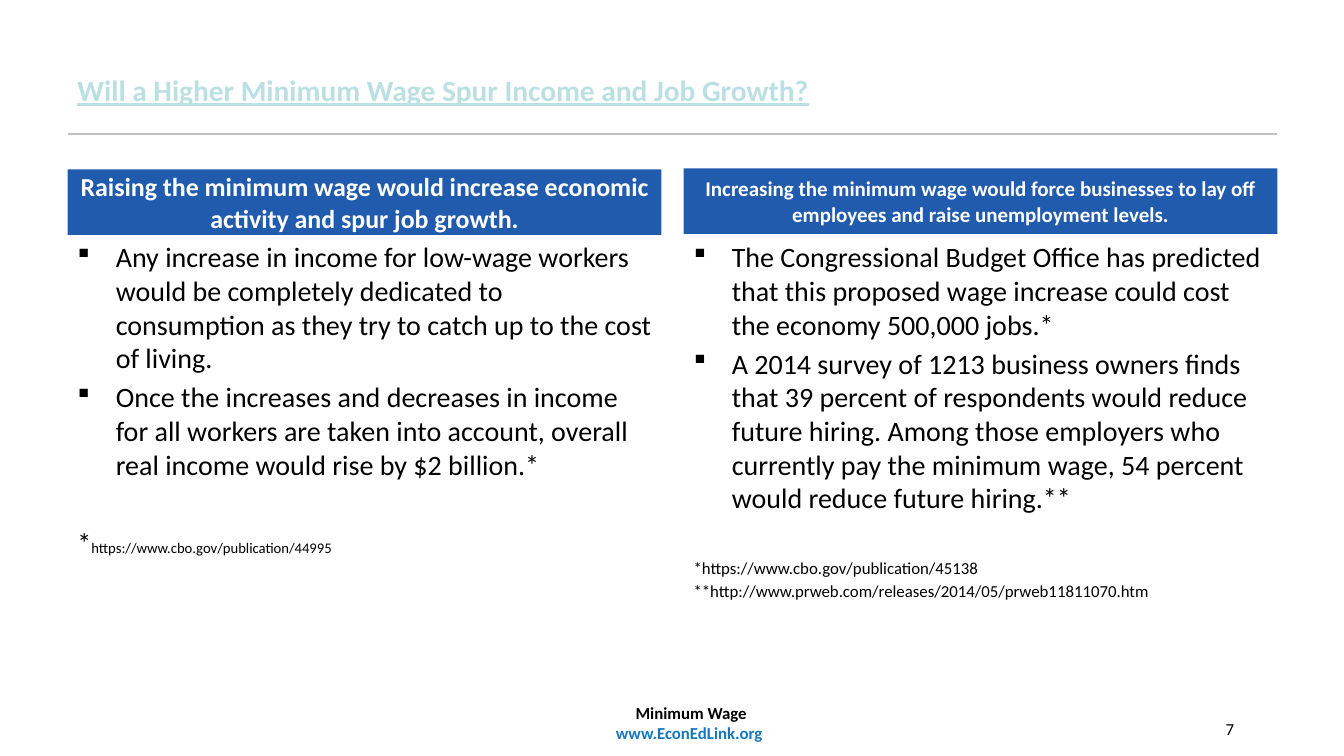
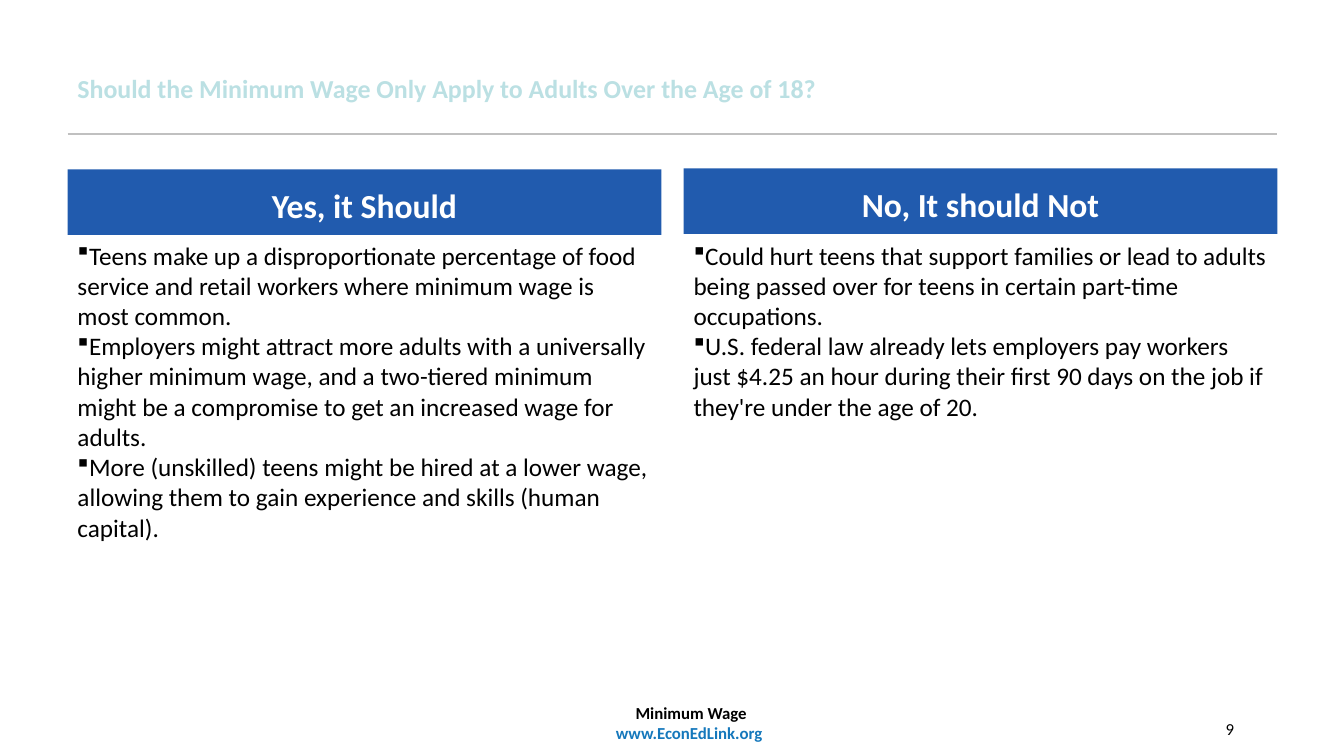
from lxml import etree
from pptx import Presentation, util as u
from pptx.dml.color import RGBColor
from pptx.enum import shapes, text
from pptx.oxml.ns import qn

INK, WHITE, PALE = "000000", "FFFFFF", "BBE0E3"
BLUE, LINK, GRAY = "215BAE", "1578BC", "C0C0C0"
FACE = "Calibri"
LEFT, RIGHT, WIDE, FULL = 0.67, 6.78, 5.89, 12
ALIGN = text.PP_ALIGN


def hue(code):
    return RGBColor.from_string(code)


def style(font, size, color=INK, bold=False, under=False):
    font.name, font.size = FACE, u.Pt(size)
    font.bold, font.underline = bold, under
    font.color.rgb = hue(color)


def frame(slide, box):
    body = slide.shapes.add_textbox(*map(u.Inches, box)).text_frame
    body.word_wrap = True
    return body


def line(body, words, size, first, align=ALIGN.LEFT, before=0, hang=None, **look):
    par = body.paragraphs[0] if first else body.add_paragraph()
    par.alignment = align
    if before and not first:
        par.space_before = u.Pt(before)
    if hang is not None:
        props = par._p.get_or_add_pPr()
        props.set("marL", str(u.Inches(hang)))
        props.set("indent", str(-u.Inches(hang)))
        etree.SubElement(props, qn("a:buFont")).set("typeface", "Wingdings")
        etree.SubElement(props, qn("a:buChar")).set("char", "§")
    par.add_run().text = words
    style(par.font, size, **look)
    return par


def base(deck, title, size, page, under=False):
    slide = deck.slides.add_slide(deck.slide_layouts[6])
    rule = slide.shapes.add_connector(
        shapes.MSO_CONNECTOR.STRAIGHT,
        *map(u.Inches, (LEFT, 1.33, LEFT + FULL, 1.33)))
    rule.line.color.rgb, rule.line.width = hue(GRAY), u.Pt(1.25)
    etree.SubElement(rule._element.spPr, qn("a:effectLst"))
    line(frame(slide, (LEFT, 0.67, FULL, 0.67)), title, size, True,
         color=PALE, bold=True, under=under)
    line(frame(slide, (9.56, 7.08, 2.78, 0.5)), page, 12, True, ALIGN.RIGHT)
    foot = frame(slide, (1.1, 6.92, 11.51, 0.5))
    line(foot, "Minimum Wage", 12, True, ALIGN.CENTER, bold=True)
    line(foot, "www.EconEdLink.org ", 12, False, ALIGN.CENTER,
         color=LINK, bold=True)
    return slide


def band(slide, left, top, words, size, drop):
    bar = slide.shapes.add_shape(
        shapes.MSO_SHAPE.RECTANGLE, *map(u.Inches, (left, top, WIDE, 0.65)))
    bar.shadow.inherit = False
    bar.fill.solid()
    bar.fill.fore_color.rgb = hue(BLUE)
    bar.line.fill.background()
    body = bar.text_frame
    body.word_wrap = True
    body.vertical_anchor = text.MSO_ANCHOR.MIDDLE
    body.margin_top, body.margin_bottom = u.Inches(drop), 0
    line(body, words, size, True, ALIGN.CENTER, color=WHITE, bold=True)


def column(slide, left, top, head, size, drop, points, point, hang, gap):
    band(slide, left, top, head, size, drop)
    body = frame(slide, (left, 2.33, WIDE, 4.32))
    for i, words in enumerate(points):
        line(body, words, point, i == 0, before=gap, hang=hang)
    return body


def growth(deck):
    slide = base(deck, "Will a Higher Minimum Wage Spur Income and Job Growth?",
                 21, "7", under=True)
    pro = column(
        slide, LEFT, 1.68,
        "Raising the minimum wage would increase economic activity and spur job growth.",
        18.5, 0, [
            "Any increase in income for low-wage workers would be completely dedicated to consumption as they try to catch up to the cost of living.",
            "Once the increases and decreases in income for all workers are taken into account, overall real income would rise by $2 billion.*",
        ], 20, 0.38, 4)
    note = line(pro, "*", 20, False, before=32)
    site = note.add_run()
    site.text = "https://www.cbo.gov/publication/44995"
    site.font.size = u.Pt(10.5)
    con = column(
        slide, RIGHT, 1.67,
        "Increasing the minimum wage would force businesses to lay off employees and raise unemployment levels.",
        15, 0, [
            "The Congressional Budget Office has predicted that this proposed wage increase could cost the economy 500,000 jobs.*",
            "A 2014 survey of 1213 business owners finds that 39 percent of respondents would reduce future hiring. Among those employers who currently pay the minimum wage, 54 percent would reduce future hiring.**",
        ], 20, 0.38, 4)
    line(con, "*https://www.cbo.gov/publication/45138", 12, False, before=30.8)
    line(con, "**http://www.prweb.com/releases/2014/05/prweb11811070.htm",
         12, False, before=2.4)


def adults(deck):
    slide = base(deck,
                 "Should the Minimum Wage Only Apply to Adults Over the Age of 18?",
                 18.5, "9")
    column(slide, LEFT, 1.68, "Yes, it Should", 24, 0.06, [
        "Teens make up a disproportionate percentage of food service and retail workers where minimum wage is most common.",
        "Employers might attract more adults with a universally higher minimum wage, and a two-tiered minimum might be a compromise to get an increased wage for adults.",
        "More (unskilled) teens might be hired at a lower wage, allowing them to gain experience and skills (human capital).",
    ], 18, 0, 0)
    column(slide, RIGHT, 1.67, "No, It should Not", 24, 0.06, [
        "Could hurt teens that support families or lead to adults being passed over for teens in certain part-time occupations.",
        "U.S. federal law already lets employers pay workers just $4.25 an hour during their first 90 days on the job if they're under the age of 20.",
    ], 18, 0, 0)


def main():
    deck = Presentation()
    deck.slide_width, deck.slide_height = u.Inches(13.33), u.Inches(7.5)
    growth(deck)
    adults(deck)
    deck.save("out.pptx")


if __name__ == "__main__":
    main()
